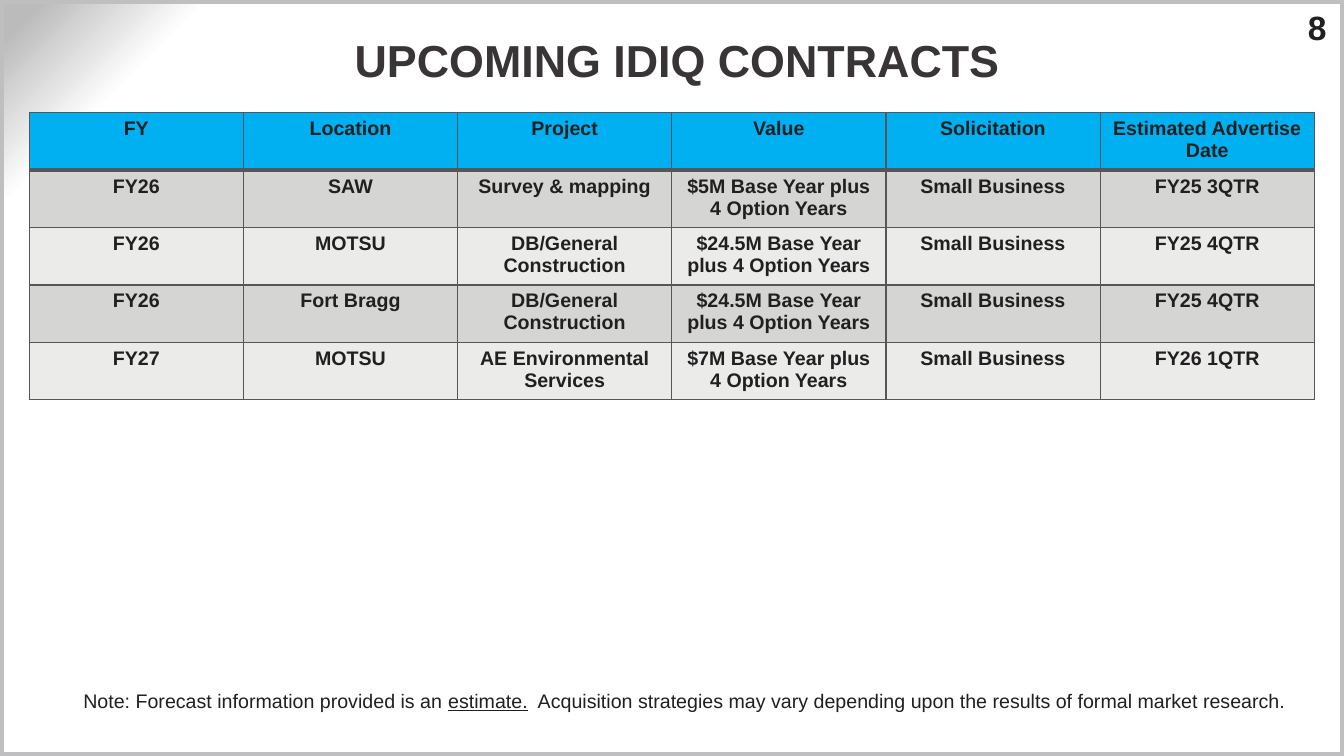
from lxml import etree
from pptx import Presentation
from pptx.dml.color import RGBColor
from pptx.enum.shapes import MSO_SHAPE as Shape
from pptx.enum.text import MSO_ANCHOR as Anchor, PP_ALIGN as Align
from pptx.oxml import parse_xml
from pptx.oxml.ns import nsdecls, qn
from pptx.util import Pt

WIDTH, HEIGHT = 960, 540
INK, TITLE_INK, RULE = "221F20", "393436", "565557"
HEADER_FILL, BANDS = "00B0F0", ("D5D5D3", "EBEBEA")
CONTRACTS = [
    ("FY", "Location", "Project", "Value", "Solicitation", "Estimated Advertise Date"),
    ("FY26", "SAW", "Survey & mapping", "$5M Base Year plus 4 Option Years",
     "Small Business", "FY25 3QTR"),
    ("FY26", "MOTSU", "DB/General Construction", "$24.5M Base Year plus 4 Option Years",
     "Small Business", "FY25 4QTR"),
    ("FY26", "Fort Bragg", "DB/General Construction", "$24.5M Base Year plus 4 Option Years",
     "Small Business", "FY25 4QTR"),
    ("FY27", "MOTSU", "AE Environmental Services", "$7M Base Year plus 4 Option Years",
     "Small Business", "FY26 1QTR"),
]
NOTE = [
    ("Note: Forecast information provided is an ", False),
    ("estimate.", True),
    ("  Acquisition strategies may vary depending upon the results of formal market research.", False),
]


def color(value):
    return RGBColor.from_string(value)


def apply(target, values):
    for name, value in values.items():
        setattr(target, name, value)


def write(paragraph, runs, size, ink=INK, bold=False, align=Align.LEFT):
    paragraph.alignment = align
    for text, underline in runs:
        run = paragraph.add_run()
        run.text = text
        apply(run.font, {"name": "Arial", "size": Pt(size), "bold": bold, "underline": underline})
        run.font.color.rgb = color(ink)


def add_text(slide, box, runs, margins, anchor=Anchor.TOP, **style):
    frame = slide.shapes.add_textbox(*map(Pt, box)).text_frame
    sides = ("margin_left", "margin_top", "margin_right", "margin_bottom")
    apply(frame, {"word_wrap": True, "vertical_anchor": anchor, **dict(zip(sides, map(Pt, margins)))})
    write(frame.paragraphs[0], runs, **style)


def paint_background(slide):
    slide.background.fill.gradient()
    gradient = next(slide.element.iter(qn("a:gradFill")))
    stops = "".join(
        f'<a:gs pos="{position}000"><a:srgbClr val="{value}"/></a:gs>'
        for position, value in ((87, "FFFFFF"), (90, "FFFFFF"), (98, "BBBBBC")))
    gradient.getparent().replace(gradient, parse_xml(
        f'<a:gradFill {nsdecls("a")} rotWithShape="1"><a:gsLst>{stops}</a:gsLst>'
        '<a:path path="circle"><a:fillToRect l="100000" t="100000"/></a:path></a:gradFill>'))


def add_frame(slide, box):
    frame = slide.shapes.add_shape(Shape.RECTANGLE, *map(Pt, box))
    frame.shadow.inherit = False
    frame.fill.background()
    frame.line.color.rgb = color("BFBFC2")
    frame.line.width = Pt(6)


def set_borders(cell, bottom):
    properties = cell._tc.get_or_add_tcPr()
    for index, (side, width) in enumerate(zip("LRTB", (1, 1, 1, bottom))):
        line = etree.Element(qn(f"a:ln{side}"), w=str(Pt(width)))
        fill = etree.SubElement(line, qn("a:solidFill"))
        etree.SubElement(fill, qn("a:srgbClr"), val=RULE)
        properties.insert(index, line)


def add_contracts(slide, box):
    table = slide.shapes.add_table(len(CONTRACTS), len(CONTRACTS[0]), *map(Pt, box)).table
    for row_index, contract in enumerate(CONTRACTS):
        header = row_index == 0
        fill = HEADER_FILL if header else BANDS[(row_index - 1) % 2]
        for column_index, text in enumerate(contract):
            cell = table.cell(row_index, column_index)
            cell.fill.solid()
            cell.fill.fore_color.rgb = color(fill)
            set_borders(cell, 3 if header else 1)
            write(cell.text_frame.paragraphs[0], [(text, False)], 14, bold=True, align=Align.CENTER)


def main():
    presentation = Presentation()
    apply(presentation, {"slide_width": Pt(WIDTH), "slide_height": Pt(HEIGHT)})
    slide = presentation.slides.add_slide(presentation.slide_layouts[6])
    paint_background(slide)
    add_text(slide, (904.3, 5, 43.2, 28.8), [("8", False)], (7.2, 0, 0, 0),
             size=24, bold=True, align=Align.RIGHT)
    add_frame(slide, (0, 0, WIDTH, HEIGHT))
    add_contracts(slide, (20.9, 80.6, 918, 205))
    add_text(slide, (74.9, 10.1, 817.9, 65.5), [("UPCOMING IDIQ CONTRACTS", False)],
             (3.6, 0, 3.6, 0), Anchor.MIDDLE, size=32, ink=TITLE_INK, bold=True, align=Align.CENTER)
    add_text(slide, (52.4, 488.2, 874.1, 24.5), NOTE, (7.2, 3.6, 7.2, 3.6), size=14)
    presentation.save("out.pptx")


if __name__ == "__main__":
    main()
